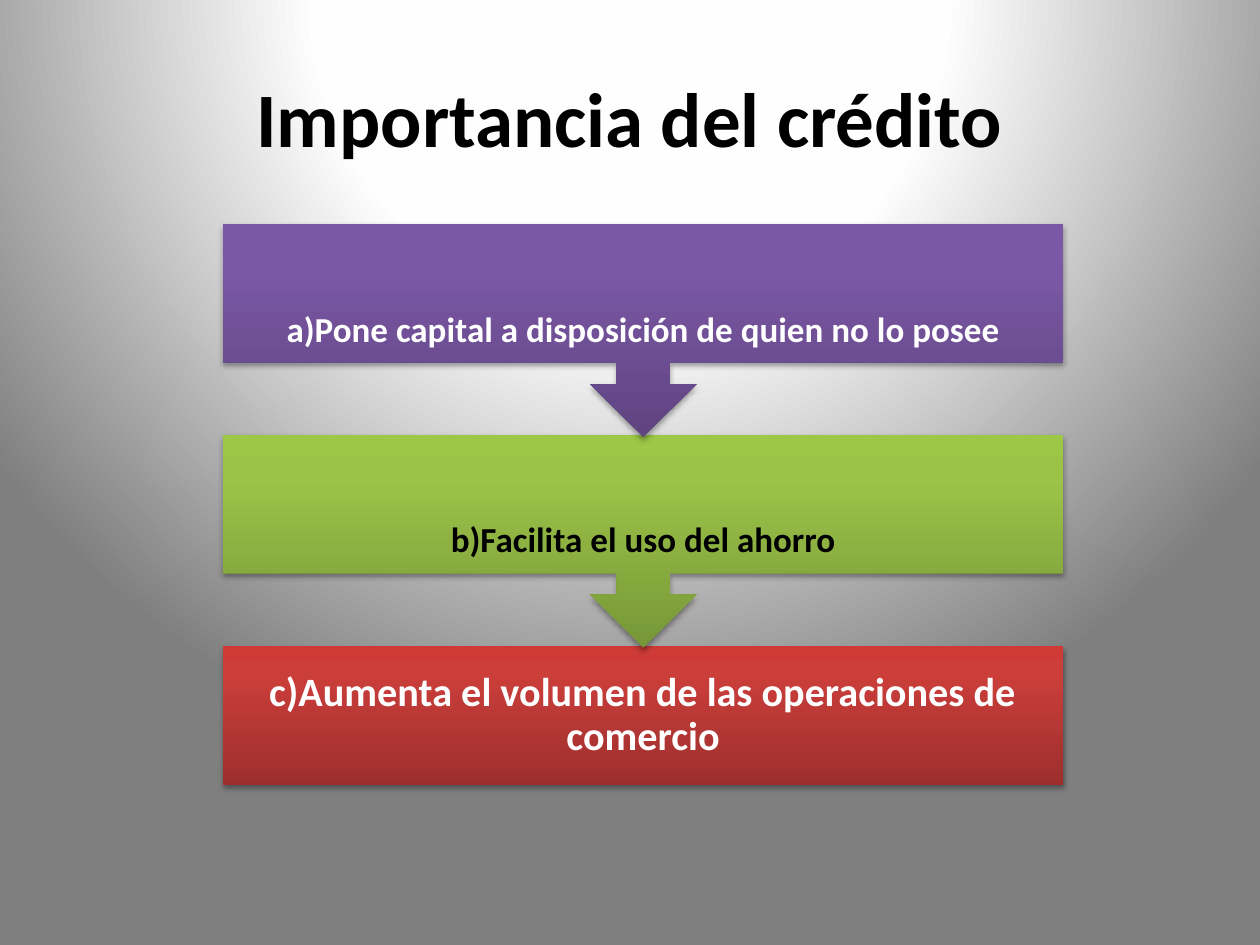
from lxml.etree import SubElement
from pptx import Presentation
from pptx.dml.color import RGBColor
from pptx.enum.shapes import MSO_SHAPE
from pptx.enum.text import MSO_ANCHOR, PP_ALIGN
from pptx.oxml.ns import qn
from pptx.util import Inches, Pt

FONT = "Calibri"
STEP_LEFT, STEP_WIDTH = 1.77, 6.67


def color(hex_string):
    return RGBColor.from_string(hex_string)


def add_part(parent, tag, **attributes):
    return SubElement(parent, qn(tag), {key: str(value) for key, value in attributes.items()})


def set_gradient(fill, owner, stops):
    """Give a fill its stops and return the element that takes the direction."""
    fill.gradient()
    gradient = owner.find(".//" + qn("a:gradFill"))
    for child in list(gradient):
        gradient.remove(child)
    gradient.set("rotWithShape", "0")
    stop_list = add_part(gradient, "a:gsLst")
    for position, hex_string in stops:
        stop = add_part(stop_list, "a:gs", pos=position * 1000)
        add_part(stop, "a:srgbClr", val=hex_string)
    return gradient


def set_shadow(shape):
    shape.shadow.inherit = False
    effects = shape.element.spPr.find(qn("a:effectLst"))
    shadow = add_part(effects, "a:outerShdw", blurRad=Pt(3.1), dist=Pt(1.8),
                      dir=5400000, rotWithShape=0)
    shadow_color = add_part(shadow, "a:srgbClr", val="000000")
    add_part(shadow_color, "a:alpha", val=35000)


def write_text(frame, text, size, hex_string):
    paragraph = frame.paragraphs[0]
    paragraph.alignment = PP_ALIGN.CENTER
    run = paragraph.add_run()
    run.text = text
    run.font.name = FONT
    run.font.size = Pt(size)
    run.font.bold = True
    run.font.color.rgb = color(hex_string)
    return paragraph


def set_background(slide):
    stops = [(0, "FFFFFF"), (40, "FEFEFE"), (100, "7F7F7F")]
    gradient = set_gradient(slide.background.fill, slide.element, stops)
    circle = add_part(gradient, "a:path", path="circle")
    add_part(circle, "a:fillToRect", l=50000, t=-80000, r=50000, b=180000)


def add_title(slide, left, top, width, height):
    title = slide.shapes.title
    title.left, title.top = Inches(left), Inches(top)
    title.width, title.height = Inches(width), Inches(height)
    title.text_frame.vertical_anchor = MSO_ANCHOR.MIDDLE
    write_text(title.text_frame, "Importancia del crédito", 44, "000000")


def add_step(group, top, height, kind, gradient_colors, text, size, text_color, inset):
    box = [Inches(length) for length in (STEP_LEFT, top, STEP_WIDTH, height)]

    # Block, with its arrow turned to point down
    block = group.shapes.add_shape(kind, *box)
    if kind == MSO_SHAPE.UP_ARROW_CALLOUT:
        block.rotation = 180
    gradient = set_gradient(block.fill, block.element, zip((0, 80, 100), gradient_colors))
    add_part(gradient, "a:lin", ang=16200000, scaled=0)
    block.line.fill.background()
    set_shadow(block)

    # Upright label over the block
    frame = group.shapes.add_textbox(*box).text_frame
    frame.word_wrap = True
    frame.vertical_anchor = MSO_ANCHOR.MIDDLE
    frame.margin_left = frame.margin_right = Inches(inset)
    frame.margin_top = frame.margin_bottom = Inches(inset)
    write_text(frame, text, size, text_color).line_spacing = 0.9


def add_process(slide):
    group = slide.shapes.add_group_shape()
    callout = MSO_SHAPE.UP_ARROW_CALLOUT
    # Last step first, so that each arrow lies over the step below it
    add_step(group, 5.13, 1.1, MSO_SHAPE.RECTANGLE, ("9C2F2D", "CB3E3A", "CE3B37"),
             "c)Aumenta el volumen de las operaciones de comercio", 23, "FFFFFF", 0.18)
    add_step(group, 3.45, 1.69, callout, ("779737", "9BC348", "9DC746"),
             "b)Facilita el uso del ahorro", 20, "000000", 0.16)
    add_step(group, 1.78, 1.69, callout, ("5F4480", "7B58A6", "7C57A8"),
             "a)Pone capital a disposición de quien no lo posee", 20, "FFFFFF", 0.16)


def main():
    presentation = Presentation()
    presentation.slide_width, presentation.slide_height = Inches(10), Inches(7.5)
    slide = presentation.slides.add_slide(presentation.slide_layouts[5])
    set_background(slide)
    add_title(slide, 0.5, 0.3, 9, 1.25)
    add_process(slide)
    presentation.save("out.pptx")


if __name__ == "__main__":
    main()
